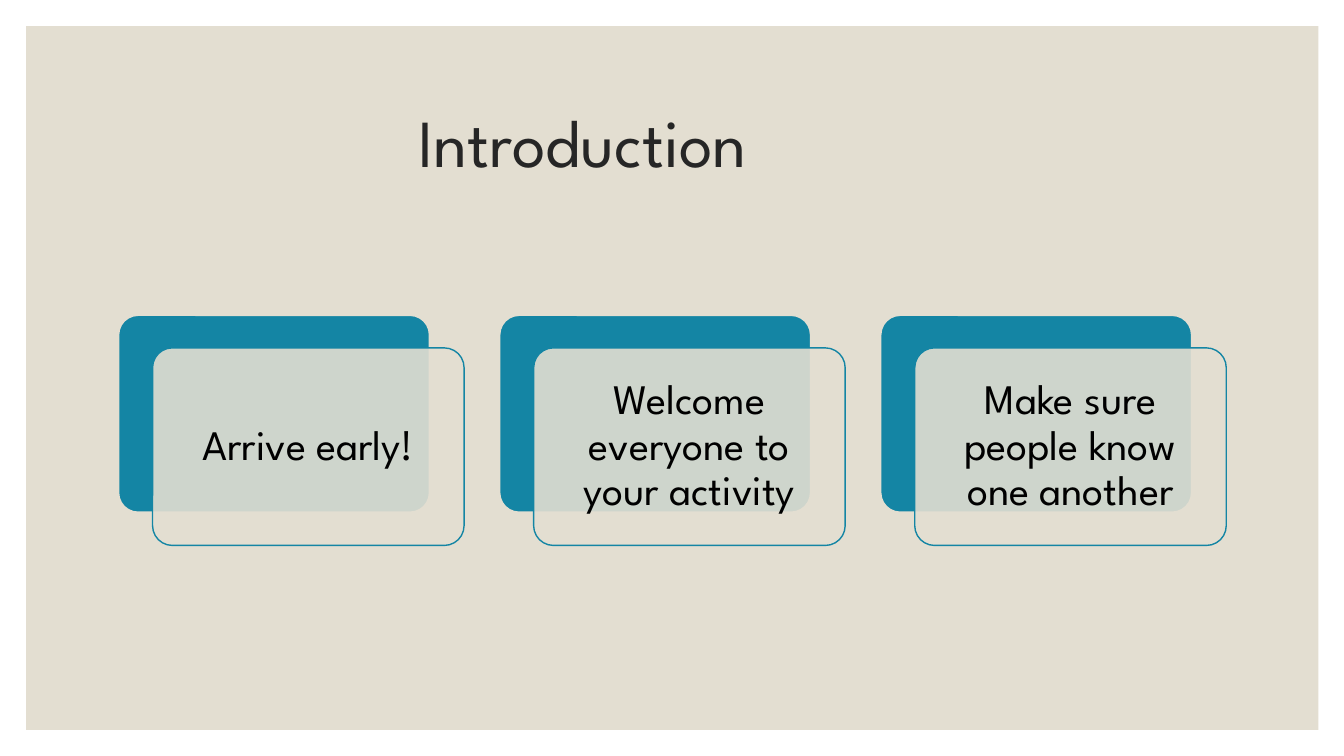
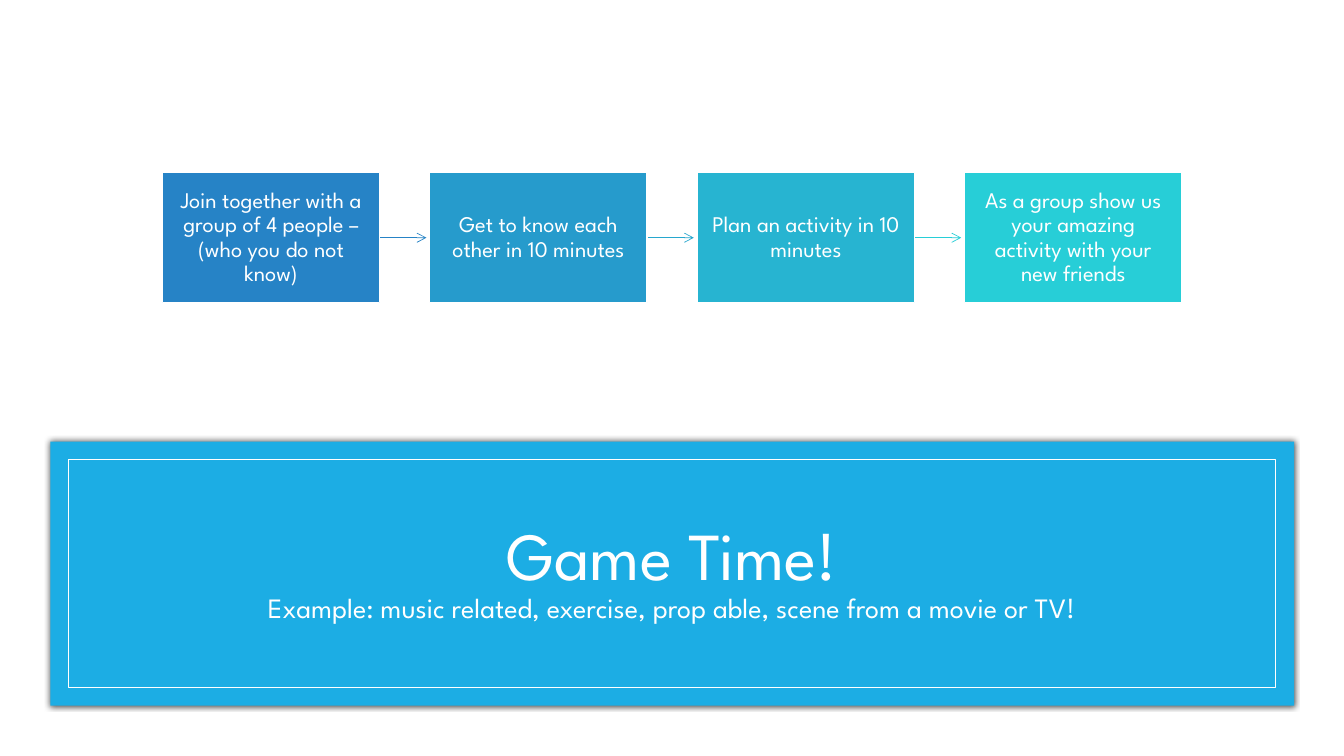
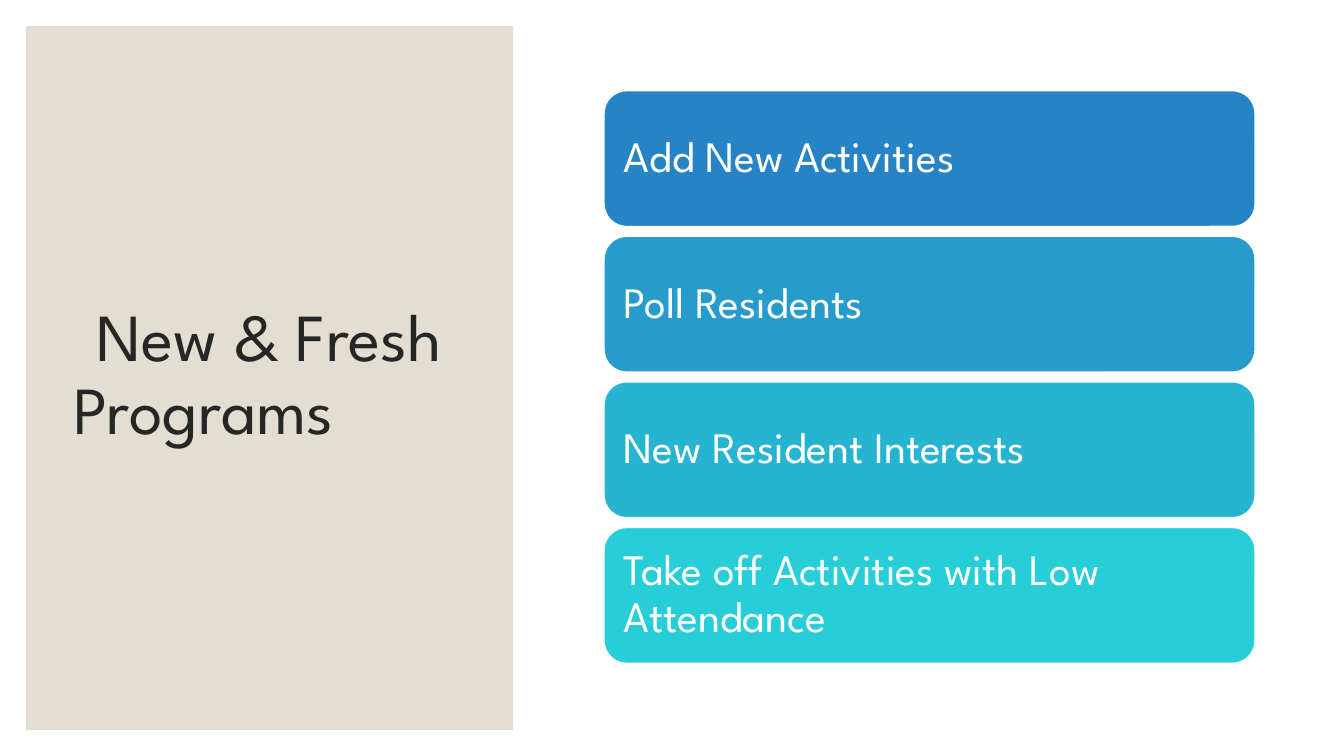
"""Build three activity slides: introduction, game time and new programs."""
from dataclasses import dataclass

from lxml.etree import SubElement
from pptx import Presentation
from pptx.dml.color import RGBColor
from pptx.enum.shapes import MSO_CONNECTOR as Line, MSO_SHAPE as Kind
from pptx.enum.text import MSO_ANCHOR as Anchor, MSO_AUTO_SIZE as Fit, PP_ALIGN as Align
from pptx.oxml.ns import qn
from pptx.util import Pt


@dataclass(frozen=True)
class Theme:
    font: str = "League Spartan"
    sand: str = "E3DED1"
    teal: str = "1485A4"
    sky: str = "1CADE4"
    white: str = "FFFFFF"
    black: str = "000000"
    ink: str = "262626"
    ramp: tuple = ("2683C6", "269BCC", "27B4D1", "27CED7")
    links: tuple = ("2683C6", "27A7CE", "27CED7")
    head: int = 48
    sub: int = 20
    card: int = 30
    step: int = 16
    bar: int = 31


T = Theme()


def rgb(code):
    return RGBColor.from_string(code)


def style(para, size, color, align):
    font = para.font
    font.name, font.size = T.font, Pt(size)
    font.color.rgb = rgb(color)
    para.alignment, para.line_spacing = align, 0.9


def box(slide, kind, area, fill=None, line=None, width=1):
    shape = slide.shapes.add_shape(kind, *map(Pt, area))
    shape.shadow.inherit = False
    if fill:
        shape.fill.solid()
        shape.fill.fore_color.rgb = rgb(fill)
    else:
        shape.fill.background()
    if line:
        shape.line.color.rgb = rgb(line)
        shape.line.width = Pt(width)
    else:
        shape.line.fill.background()
    return shape


def label(shape, text, size, color, inset, align=Align.CENTER):
    frame = shape.text_frame
    frame.word_wrap = True
    frame.vertical_anchor = Anchor.MIDDLE
    frame.margin_left = frame.margin_right = Pt(inset)
    frame.margin_top = frame.margin_bottom = Pt(inset)
    para = frame.paragraphs[0]
    para.text = text
    style(para, size, color, align)


def title(slide, text, area, color=T.ink, align=Align.CENTER):
    shape = slide.shapes.title
    shape.left, shape.top, shape.width, shape.height = map(Pt, area)
    frame = shape.text_frame
    frame.word_wrap, frame.auto_size = True, Fit.NONE
    frame.vertical_anchor = Anchor.MIDDLE
    para = frame.paragraphs[0]
    para.text = text
    style(para, T.head, color, align)
    shape.element.getparent().append(shape.element)
    return frame


def panel(slide, width):
    box(slide, Kind.RECTANGLE, (18.7, 18.7, width, 502.6), T.sand)


def fade(shape, share):
    color = shape.fill._xPr.find(qn("a:solidFill"))[0]
    SubElement(color, qn("a:alpha"), val=str(share * 1000))


def glow(shape, blur, share):
    effects = shape.element.spPr.find(qn("a:effectLst"))
    shade = SubElement(effects, qn("a:outerShdw"), blurRad=str(Pt(blur)), dist="0", dir="0")
    color = SubElement(shade, qn("a:srgbClr"), val=T.black)
    SubElement(color, qn("a:alpha"), val=str(share * 1000))


def arrow(slide, left, right, y, color):
    link = slide.shapes.add_connector(Line.STRAIGHT, Pt(left), Pt(y), Pt(right), Pt(y))
    link.line.color.rgb = rgb(color)
    link.line.width = Pt(0.5)
    SubElement(link.line._get_or_add_ln(), qn("a:tailEnd"), type="arrow")
    SubElement(link.element.spPr, qn("a:effectLst"))


def card(slide, x, y, text):
    wide, high = 222.5, 141.1
    back = box(slide, Kind.ROUNDED_RECTANGLE, (x, y, wide, high), T.teal, T.sand, 1.5)
    front = box(slide, Kind.ROUNDED_RECTANGLE, (x + 24.5, y + 23.5, wide, high), T.sand, T.teal)
    for shape in (back, front):
        shape.adjustments[0] = 0.1
    fade(front, 90)
    label(front, text, T.card, T.black, 8.6)


def intro(slide):
    panel(slide, 923)
    frame = title(slide, "Introduction", (84, 50.4, 792, 108))
    frame.margin_right = Pt(134.5)
    texts = ("Arrive early!", "Welcome everyone to your activity",
             "Make sure people know one another")
    for i, text in enumerate(texts):
        card(slide, 84.5 + 272.2 * i, 225, text)


def game(slide):
    banner = box(slide, Kind.RECTANGLE, (36, 315.4, 888.5, 188.6), T.sky)
    glow(banner, 4, 66)
    box(slide, Kind.RECTANGLE, (48.5, 328.2, 862.6, 162.7), None, T.white, 0.5)
    frame = title(slide, "Game Time!", (84, 355.7, 792, 108), T.white)
    para = frame.paragraphs[0]
    para.add_line_break()
    run = para.add_run()
    run.text = "Example: music related, exercise, prop able, scene from a movie or TV!"
    run.font.size = Pt(T.sub)
    texts = ("Join together with a group of 4 people – (who you do not know)",
             "Get to know each other in 10 minutes",
             "Plan an activity in 10 minutes",
             "As a group show us your amazing activity with your new friends")
    left, top, wide, high, pitch = 116, 123.3, 155.3, 93, 191
    for i, color in enumerate(T.links):
        start = left + pitch * i + wide
        arrow(slide, start, start + 33.3, top + high / 2, color)
    for i, (text, fill) in enumerate(zip(texts, T.ramp)):
        step = box(slide, Kind.RECTANGLE, (left + pitch * i, top, wide, high), fill, T.white)
        label(step, text, T.step, T.white, 7.9)


def fresh(slide):
    panel(slide, 347.8)
    frame = title(slide, "New & Fresh Programs", (45.4, 43.9, 296.6, 449.3), align=Align.LEFT)
    props = frame.paragraphs[0]._p.get_or_add_pPr()
    props.set("marL", "0")
    props.set("indent", str(Pt(16.5)))
    texts = ("Add New Activities", "Poll Residents", "New Resident Interests",
             "Take off Activities with Low Attendance")
    for i, (text, fill) in enumerate(zip(texts, T.ramp)):
        area = (431.5, 64.8 + 104 * i, 465, 97)
        bar = box(slide, Kind.ROUNDED_RECTANGLE, area, fill, T.white)
        label(bar, text, T.bar, T.white, 9.4, Align.LEFT)


def main():
    deck = Presentation()
    deck.slide_width, deck.slide_height = Pt(960), Pt(540)
    for build in (intro, game, fresh):
        build(deck.slides.add_slide(deck.slide_layouts[5]))
    deck.save("out.pptx")


if __name__ == "__main__":
    main()
